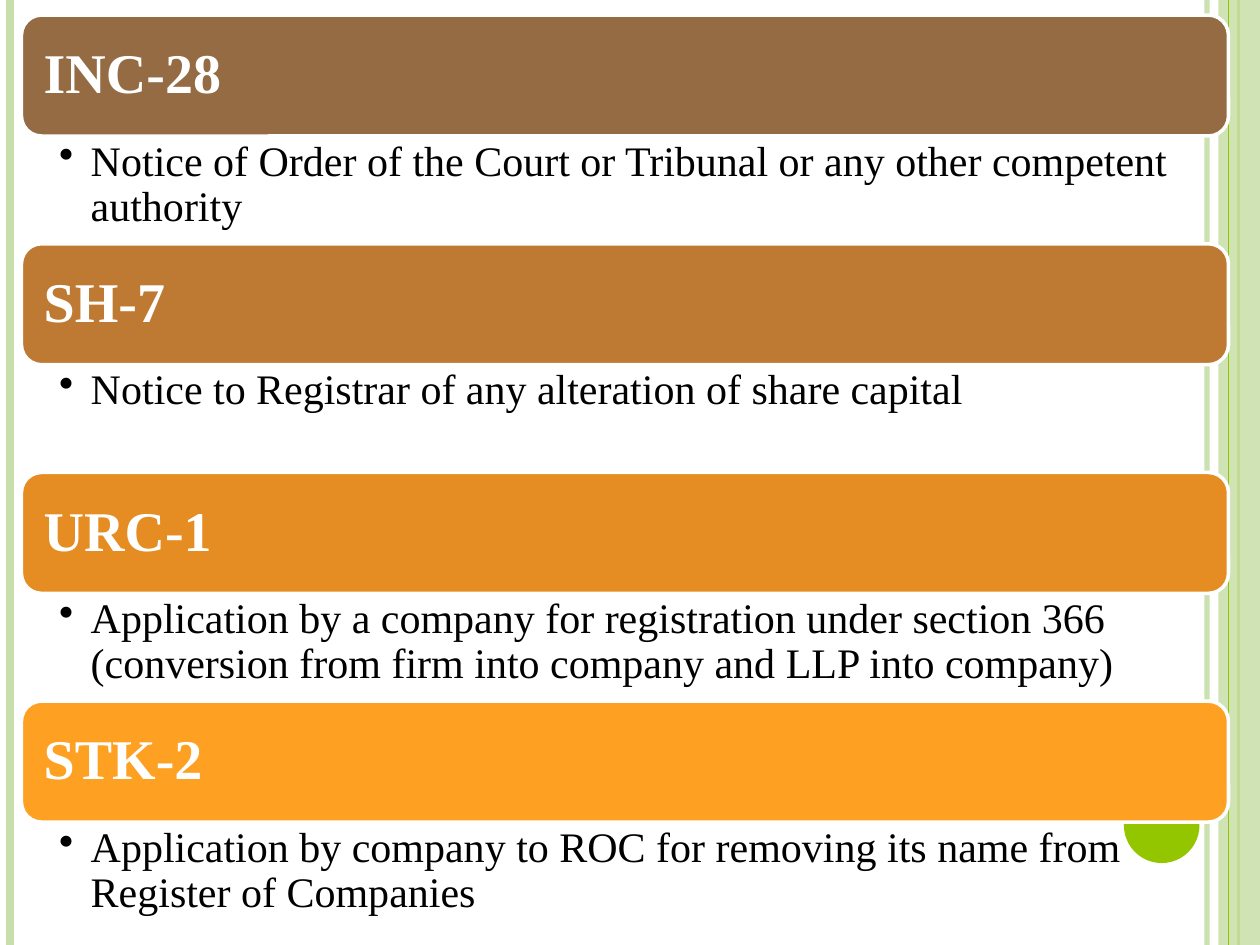
"""Build a slide listing four company forms with their purposes."""
from lxml.etree import SubElement
from pptx import Presentation
from pptx.dml.color import RGBColor
from pptx.enum.shapes import MSO_CONNECTOR, MSO_SHAPE
from pptx.enum.text import MSO_ANCHOR, PP_ALIGN
from pptx.oxml.ns import qn
from pptx.util import Inches, Pt

COLORS = {
    "brown": "956B43", "copper": "BE7A32", "amber": "E58D23", "orange": "FEA022",
    "pale": "C8DFAB", "green": "94C600", "white": "FFFFFF", "black": "000000",
}
FORMS = [
    ("INC-28", "brown", "Notice of Order of the Court or Tribunal or any other competent authority"),
    ("SH-7", "copper", "Notice to Registrar of any alteration of share capital"),
    ("URC-1", "amber", "Application by a company for registration under section 366 "
                       "(conversion from firm into company and LLP into company)"),
    ("STK-2", "orange", "Application by company to ROC for removing its name from Register of Companies"),
]
BACK_RULES = [(9.58, "pale", 3, 93), (0.08, "pale", 4.5, 100), (9.83, "green", 1.5, 100)]
FRONT_RULES = [(9.75, "green", 0.75, 100)]
FONT = "Times New Roman"
LEFT, TOP, WIDTH = 0.17, 0.12, 9.58
BAND_HEIGHT, NOTE_HEIGHT = 0.96, 0.85
PITCH = 1.815


def color(name):
    return RGBColor.from_string(COLORS[name])


def set_opacity(fill_parent, percent):
    for tint in fill_parent.iter(qn("a:srgbClr")):
        SubElement(tint, qn("a:alpha")).set("val", str(percent * 1000))


def add_rule(page, x, name, weight, opacity):
    rule = page.shapes.add_connector(
        MSO_CONNECTOR.STRAIGHT, Inches(x), Inches(0), Inches(x), Inches(7.5))
    rule.line.color.rgb = color(name)
    rule.line.width = Pt(weight)
    if opacity < 100:
        set_opacity(rule.line._get_or_add_ln(), opacity)
    SubElement(rule._element.spPr, qn("a:effectLst"))


def add_shape(page, kind, bounds, name):
    shape = page.shapes.add_shape(kind, *map(Inches, bounds))
    shape.shadow.inherit = False
    shape.fill.solid()
    shape.fill.fore_color.rgb = color(name)
    shape.line.fill.background()
    return shape


def write(box, text, size, name, insets, anchor, bold=False):
    frame = box.text_frame
    frame.word_wrap = True
    frame.vertical_anchor = anchor
    frame.margin_left, frame.margin_top, frame.margin_right, frame.margin_bottom = map(Inches, insets)
    para = frame.paragraphs[0]
    para.text = text
    para.alignment = PP_ALIGN.LEFT
    para.line_spacing = 0.9
    para.font.name = FONT
    para.font.size = Pt(size)
    para.font.bold = bold
    para.font.color.rgb = color(name)
    return para


def add_bullet(para):
    properties = para._p.get_or_add_pPr()
    properties.set("marL", str(Inches(0.25)))
    properties.set("indent", str(Inches(-0.25)))
    bullet = properties.makeelement(qn("a:buChar"), {"char": "•"})
    properties.find(qn("a:defRPr")).addprevious(bullet)


def add_form(page, index, title, name, purpose):
    top = TOP + index * PITCH
    band = add_shape(page, MSO_SHAPE.ROUNDED_RECTANGLE, (LEFT, top, WIDTH, BAND_HEIGHT), name)
    band.line.color.rgb = color("white")
    band.line.width = Pt(2)
    write(band, title, 32, "white", (0.13,) * 4, MSO_ANCHOR.MIDDLE, bold=True)
    note = page.shapes.add_textbox(
        *map(Inches, (LEFT, top + BAND_HEIGHT, WIDTH, NOTE_HEIGHT)))
    add_bullet(write(note, purpose, 24, "black", (0.3, 0.03, 0.19, 0.03), MSO_ANCHOR.TOP))


def main():
    deck = Presentation()
    deck.slide_width, deck.slide_height = Inches(10), Inches(7.5)
    page = deck.slides.add_slide(deck.slide_layouts[6])
    for rule in BACK_RULES:
        add_rule(page, *rule)
    strip = add_shape(page, MSO_SHAPE.RECTANGLE, (9.67, 0, 0.33, 7.5), "pale")
    set_opacity(strip._element.spPr, 87)
    for rule in FRONT_RULES:
        add_rule(page, *rule)
    add_shape(page, MSO_SHAPE.OVAL, (8.92, 6.25, 0.6, 0.6), "green")
    for index, form in enumerate(FORMS):
        add_form(page, index, *form)
    deck.save("out.pptx")


if __name__ == "__main__":
    main()
